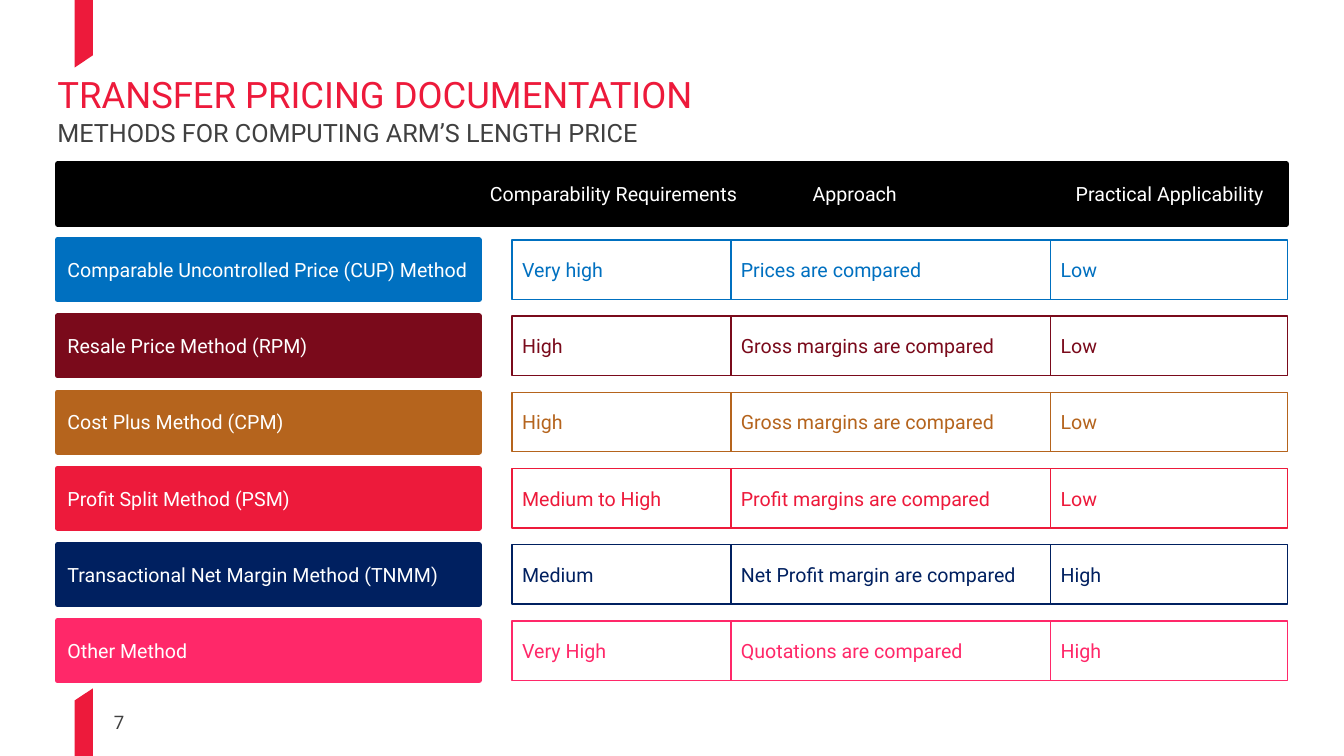
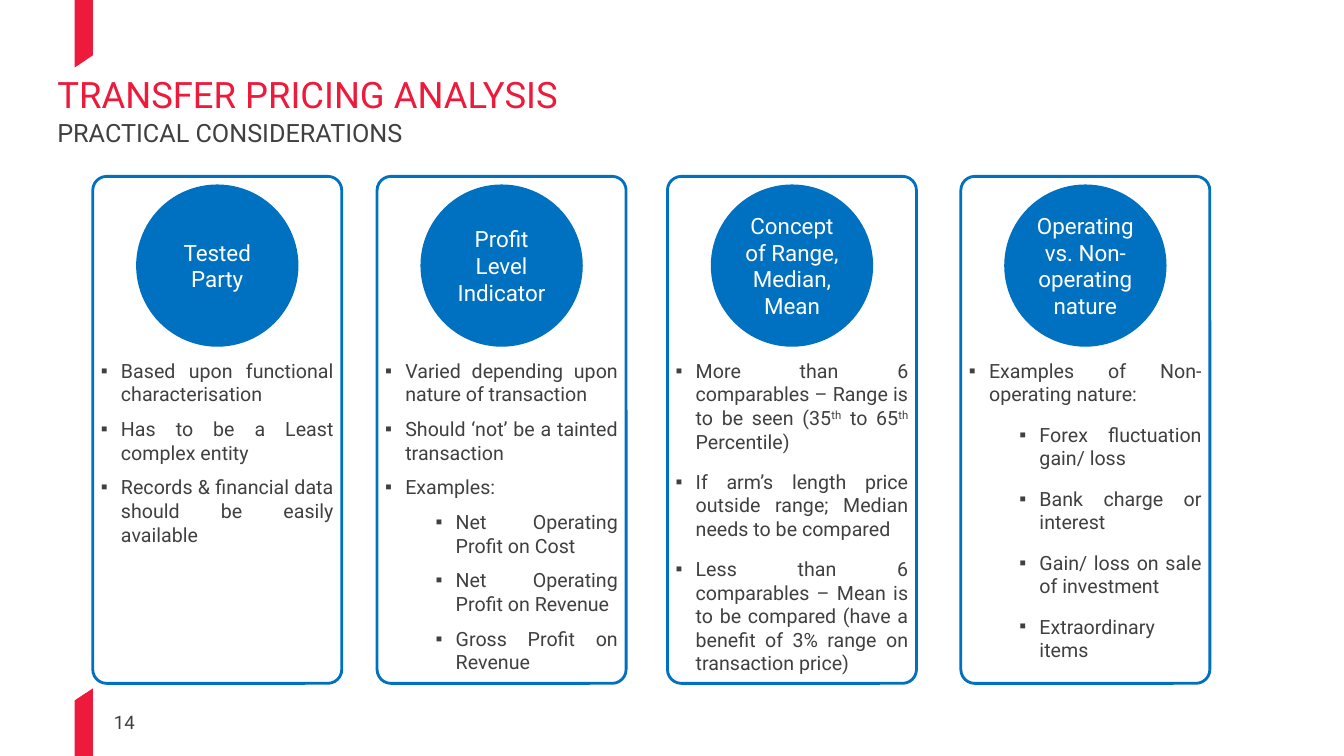
from lxml import etree
from pptx import Presentation
from pptx.dml.color import RGBColor
from pptx.enum.shapes import MSO_SHAPE as SHAPE
from pptx.enum.text import MSO_ANCHOR as ANCHOR, MSO_AUTO_SIZE as AUTO, PP_ALIGN as ALIGN
from pptx.oxml.ns import qn
from pptx.util import Inches, Pt

FONT = "Roboto"
RED, BLUE, GREY, WHITE, BLACK = "ED1A3B", "0070C0", "404040", "FFFFFF", "000000"
SLIDE_W, SLIDE_H = 13.33, 7.5
TITLE_LEFT, TITLE_W = 0.47, 12.41
BAND_L, BAND_R = 0.74, 0.92
BAND_LONG, BAND_SHORT = 0.67, 0.55

ROW_TOP, ROW_H, ROW_PITCH = 2.38, 0.59, 0.756
LABEL_LEFT, LABEL_W = 0.57, 4.18
CELL_LEFT, CELL_WIDTHS = 5.08, (2.17, 3.17, 2.35)
HEADER_TOP, HEADER_W = 1.63, 12.19
HEADER_TABS = (4.19, 7.39, 10)
HEADINGS = ("Comparability Requirements", "Approach", "Practical Applicability")
METHODS = (
    (BLUE, "Comparable Uncontrolled Price (CUP) Method",
     ("Very high", "Prices are compared", "Low")),
    ("7A0A1B", "Resale Price Method (RPM)",
     ("High", "Gross margins are compared", "Low")),
    ("B5641D", "Cost Plus Method (CPM)",
     ("High", "Gross margins are compared", "Low")),
    (RED, "Profit Split Method (PSM)",
     ("Medium to High", "Profit margins are compared", "Low")),
    ("002060", "Transactional Net Margin Method (TNMM)",
     ("Medium", "Net Profit margin are compared", "High")),
    ("FF2869", "Other Method",
     ("Very High", "Quotations are compared", "High")),
)

CARD_TOP, CARD_W, CARD_H = 1.75, 2.47, 5.03
CIRCLE_TOP, CIRCLE_D = 1.83, 1.61
# Each card: left edge, heading, paragraph spacing, (level, text) items
CARDS = (
    (0.92, "Tested Party", 4, (
        (0, "Based upon functional characterisation"),
        (0, "Has to be a Least complex entity"),
        (0, "Records & financial data should be easily available"))),
    (3.74, "Profit Level Indicator", 4, (
        (0, "Varied depending upon nature of transaction"),
        (0, "Should ‘not’ be a tainted transaction"),
        (0, "Examples:"),
        (1, "Net Operating Profit on Cost"),
        (1, "Net Operating Profit on Revenue"),
        (1, "Gross Profit on Revenue"))),
    (6.62, "Concept of Range, Median, Mean", 6, (
        (0, "More than 6 comparables – Range is to be seen "
            "(35^th^ to 65^th^ Percentile)"),
        (0, "If arm’s length price outside range; Median needs to be compared"),
        (0, "Less than 6 comparables – Mean is to be compared "
            "(have a benefit of 3% range on transaction price)"))),
    (9.53, "Operating vs. Non-operating nature", 6, (
        (0, "Examples of Non-operating nature:"),
        (1, "Forex fluctuation gain/ loss"),
        (1, "Bank charge or interest"),
        (1, "Gain/ loss on sale of investment"),
        (1, "Extraordinary items"))),
)


def rgb(color):
    return RGBColor.from_string(color)


def inches(values):
    return [Inches(v) for v in values]


def write(p, text, size=14, color=GREY, align=ALIGN.LEFT, line=None, space=0):
    """Fill a paragraph; text between ^ marks is superscript."""
    p.alignment = align
    p.space_before = p.space_after = Pt(space)
    if line:
        p.line_spacing = line
    for i, part in enumerate(text.split("^")):
        r = p.add_run()
        r.text = part
        r.font.name, r.font.size = FONT, Pt(size)
        r.font.color.rgb = rgb(color)
        if i % 2:
            r._r.get_or_add_rPr().set("baseline", "30000")


def add_bullet(p, level):
    p.level = level
    pPr = p._p.get_or_add_pPr()
    pPr.set("marL", str(Inches(0.2 + 0.5 * level)))
    pPr.set("indent", str(Inches(-0.2)))
    etree.SubElement(pPr, qn("a:buFont")).set("typeface", "Arial")
    etree.SubElement(pPr, qn("a:buChar")).set("char", "▪")


def add_tab_stops(p, stops):
    tabs = etree.SubElement(p._p.get_or_add_pPr(), qn("a:tabLst"))
    for stop in stops:
        tab = etree.SubElement(tabs, qn("a:tab"))
        tab.set("pos", str(Inches(stop)))
        tab.set("algn", "l")


def set_frame(tf, anchor=ANCHOR.TOP, insets=(0.1, 0.05, 0.1, 0.05)):
    tf.word_wrap, tf.auto_size = True, AUTO.NONE
    tf.vertical_anchor = anchor
    (tf.margin_left, tf.margin_top,
     tf.margin_right, tf.margin_bottom) = inches(insets)
    return tf.paragraphs[0]


def paint(sp, fill=None, line=None, width=1):
    sp.shadow.inherit = False
    if fill:
        sp.fill.solid()
        sp.fill.fore_color.rgb = rgb(fill)
    else:
        sp.fill.background()
    if line:
        sp.line.color.rgb = rgb(line)
        sp.line.width = Pt(width)
    else:
        sp.line.fill.background()


def add_box(slide, box, kind=SHAPE.RECTANGLE, **look):
    sp = slide.shapes.add_shape(kind, *inches(box))
    paint(sp, **look)
    return sp


def add_text(slide, box, text, anchor=ANCHOR.TOP, insets=(0.1, 0.05, 0.1, 0.05),
             **style):
    tf = slide.shapes.add_textbox(*inches(box)).text_frame
    write(set_frame(tf, anchor, insets), text, **style)


def add_bar(slide, box, text, color=WHITE, **look):
    sp = add_box(slide, box, **look)
    p = set_frame(sp.text_frame, ANCHOR.MIDDLE)
    write(p, text, color=color)
    return p


def add_band(slide, edge, sign):
    """Slanted band that starts at a slide edge and runs down (1) or up (-1)."""
    left_len, right_len = ((BAND_LONG, BAND_SHORT) if sign > 0
                           else (BAND_SHORT, BAND_LONG))
    points = [inches(pt) for pt in (
        (BAND_L, edge), (BAND_R, edge),
        (BAND_R, edge + sign * right_len), (BAND_L, edge + sign * left_len))]
    builder = slide.shapes.build_freeform(*points[0])
    builder.add_line_segments(points[1:], close=True)
    sp = builder.convert_to_shape()
    paint(sp, fill=RED)
    return sp


def decorate_layout(layout, slide):
    """Leave only the title on the layout and move both bands there."""
    for ph in list(layout.placeholders):
        if ph.placeholder_format.idx:
            layout.shapes.element.remove(ph.element)
    bands = [add_band(slide, 0, 1), add_band(slide, SLIDE_H, -1)]
    for band in bands:
        layout.shapes.element.append(band.element)


def add_slide(prs, title, subtitle, number):
    layout = prs.slide_layouts[5]
    slide = prs.slides.add_slide(layout)
    if len(prs.slides) == 1:
        decorate_layout(layout, slide)
    sp = slide.shapes.title
    sp.left, sp.top, sp.width, sp.height = inches((TITLE_LEFT, 0.75, TITLE_W, 0.35))
    write(set_frame(sp.text_frame), title, size=26, color=RED, line=0.8)
    add_text(slide, (TITLE_LEFT, 1.17, TITLE_W, 0.24), subtitle, size=18, line=0.8)
    add_text(slide, (1.13, 7.05, 0.61, 0.22), str(number), size=13.3,
             anchor=ANCHOR.BOTTOM, insets=(0, 0, 0, 0))
    return slide


def add_method_row(slide, row, color, name, values):
    top = ROW_TOP + row * ROW_PITCH
    add_bar(slide, (LABEL_LEFT, top, LABEL_W, ROW_H), name,
            fill=color, line=color, width=4)
    left = CELL_LEFT
    for width, value in zip(CELL_WIDTHS, values):
        add_bar(slide, (left, top, width, ROW_H), value, color=color, line=color)
        left += width


def add_card(slide, left, heading, space, items):
    circle = add_box(slide, (left + (CARD_W - CIRCLE_D) / 2, CIRCLE_TOP,
                             CIRCLE_D, CIRCLE_D), SHAPE.OVAL, fill=BLUE)
    p = set_frame(circle.text_frame, ANCHOR.MIDDLE, (0.04, 0, 0.04, 0))
    write(p, heading, size=16, color=WHITE, align=ALIGN.CENTER)

    card = add_box(slide, (left, CARD_TOP, CARD_W, CARD_H),
                   SHAPE.ROUNDED_RECTANGLE, line=BLUE, width=2)
    card.adjustments[0] = 0.056
    tf = card.text_frame
    p = set_frame(tf, insets=(0.04, 1.77, 0.04, 0.04))
    for i, (level, text) in enumerate(items):
        p = tf.add_paragraph() if i else p
        write(p, text, align=ALIGN.JUSTIFY, space=space)
        add_bullet(p, level)


def main():
    prs = Presentation()
    prs.slide_width, prs.slide_height = inches((SLIDE_W, SLIDE_H))

    slide = add_slide(prs, "TRANSFER PRICING DOCUMENTATION",
                      "METHODS FOR COMPUTING ARM’S LENGTH PRICE", 7)
    p = add_bar(slide, (LABEL_LEFT, HEADER_TOP, HEADER_W, ROW_H),
                "".join("\t" + h for h in HEADINGS),
                fill=BLACK, line=BLACK, width=4)
    add_tab_stops(p, HEADER_TABS)
    for row, method in enumerate(METHODS):
        add_method_row(slide, row, *method)

    slide = add_slide(prs, "TRANSFER PRICING ANALYSIS",
                      "PRACTICAL CONSIDERATIONS", 14)
    for card in CARDS:
        add_card(slide, *card)

    prs.save("out.pptx")


if __name__ == "__main__":
    main()
